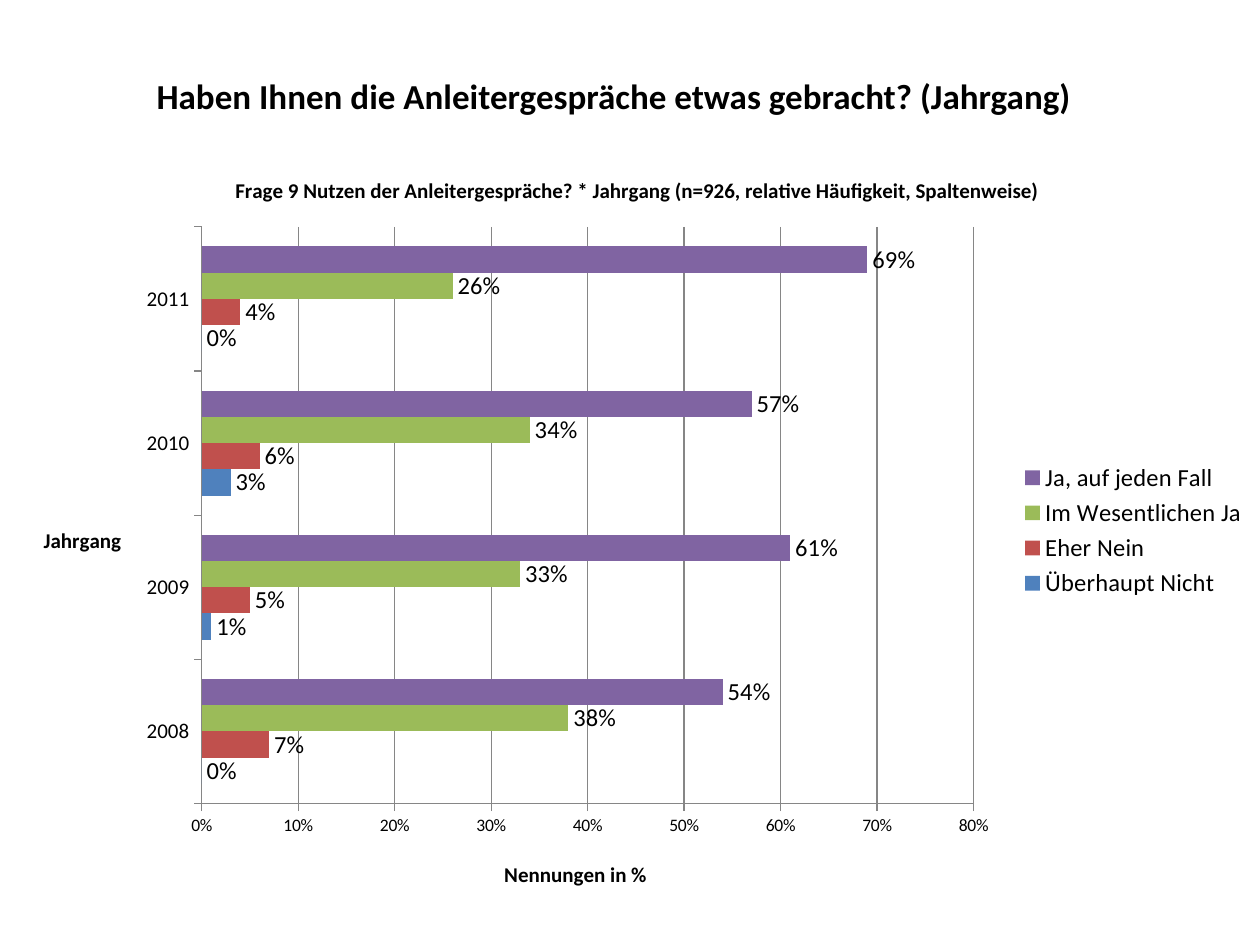
from pptx import Presentation
from pptx.chart.data import CategoryChartData
from pptx.dml.color import RGBColor
from pptx.enum import chart as charts, text
from pptx.oxml import parse_xml
from pptx.oxml.ns import nsdecls, qn
from pptx.util import Pt

PX = 914400 // 126
FONT = "Calibri"
COLORS = {"text": "000000", "line": "868686"}
YEARS = ["2008", "2009", "2010", "2011"]
ANSWERS = [
    ("Überhaupt Nicht", "4F81BD", (0, 0.01, 0.03, 0)),
    ("Eher Nein", "C0504D", (0.07, 0.05, 0.06, 0.04)),
    ("Im Wesentlichen Ja", "9BBB59", (0.38, 0.33, 0.34, 0.26)),
    ("Ja, auf jeden Fall", "8064A2", (0.54, 0.61, 0.57, 0.69)),
]


def style_font(font, size, bold=False):
    font.name, font.size, font.bold = FONT, Pt(size), bold
    font.color.rgb = RGBColor.from_string(COLORS["text"])


def add_span(frame, wording, size):
    span = frame.paragraphs[0].add_run()
    span.text = wording
    style_font(span.font, size, bold=True)


def set_layout(element, index, **fractions):
    """Place a chart part by fractions of the chart's size."""
    for old in element.findall(qn("c:layout")):
        element.remove(old)
    target = '<c:layoutTarget val="inner"/>' if "w" in fractions else ""
    modes = "".join(f'<c:{key}Mode val="edge"/>' for key in "xy")
    values = "".join(f'<c:{key} val="{value}"/>' for key, value in fractions.items())
    element.insert(index, parse_xml(
        f'<c:layout {nsdecls("c")}><c:manualLayout>{target}{modes}{values}'
        "</c:manualLayout></c:layout>"))


def add_title(page, left, top, width, height):
    box = page.shapes.title
    box.left, box.top, box.width, box.height = (n * PX for n in (left, top, width, height))
    frame = box.text_frame
    frame.word_wrap = True
    frame.vertical_anchor = text.MSO_ANCHOR.MIDDLE
    frame.paragraphs[0].alignment = text.PP_ALIGN.LEFT
    add_span(frame, "Haben Ihnen die Anleitergespräche etwas gebracht? (Jahrgang)", 20)


def style_axis(axis, title, size, x, y):
    axis.major_tick_mark = charts.XL_TICK_MARK.OUTSIDE
    axis.minor_tick_mark = charts.XL_TICK_MARK.NONE
    style_font(axis.tick_labels.font, size)
    axis.format.line.color.rgb = RGBColor.from_string(COLORS["line"])
    add_span(axis.axis_title.text_frame, title, 12)
    set_layout(axis.axis_title._element, 1, x=x, y=y)


def add_answer_chart(page, left, top, width, height):
    data = CategoryChartData(number_format="0%")
    data.categories = YEARS
    for name, _, values in ANSWERS:
        data.add_series(name, values)
    chart = page.shapes.add_chart(
        charts.XL_CHART_TYPE.BAR_CLUSTERED,
        *(n * PX for n in (left, top, width, height)), data).chart
    style_font(chart.font, 10)
    add_span(chart.chart_title.text_frame,
             "Frage 9 Nutzen der Anleitergespräche? * Jahrgang "
             "(n=926, relative Häufigkeit, Spaltenweise)", 12)

    # Axes
    years, shares = chart.category_axis, chart.value_axis
    style_axis(years, "Jahrgang", 12, 0.02, 0.49)
    years.axis_title.text_frame._txBody.bodyPr.set("rot", "0")
    style_axis(shares, "Nennungen in %", 10, 0.39, 0.93)
    shares.minimum_scale, shares.maximum_scale, shares.major_unit = 0, 0.8, 0.1
    shares.tick_labels.number_format = "0%"
    shares.tick_labels.number_format_is_linked = False
    shares.major_gridlines.format.line.color.rgb = RGBColor.from_string(COLORS["line"])

    # Bars and their labels
    plot = chart.plots[0]
    plot.gap_width, plot.overlap, plot.vary_by_categories = 150, 0, False
    for series, (_, color, _) in zip(plot.series, ANSWERS):
        series.format.fill.solid()
        series.format.fill.fore_color.rgb = RGBColor.from_string(color)
        labels = series.data_labels
        labels.show_value = True
        labels.position = charts.XL_LABEL_POSITION.OUTSIDE_END
        labels.number_format, labels.number_format_is_linked = "0%", False
        style_font(labels.font, 14)
    set_layout(chart._chartSpace.chart.plotArea, 0, x=0.15, y=0.1, w=0.62, h=0.76)

    # Legend
    chart.has_legend = True
    chart.legend.position = charts.XL_LEGEND_POSITION.RIGHT
    chart.legend.include_in_layout = False
    style_font(chart.legend.font, 14)


def main():
    deck = Presentation()
    deck.slide_width, deck.slide_height = 1260 * PX, 945 * PX
    page = deck.slides.add_slide(deck.slide_layouts[5])
    add_title(page, 144, 68, 1091, 55)
    add_answer_chart(page, 15, 151, 1245, 759)
    deck.save("out.pptx")


if __name__ == "__main__":
    main()
